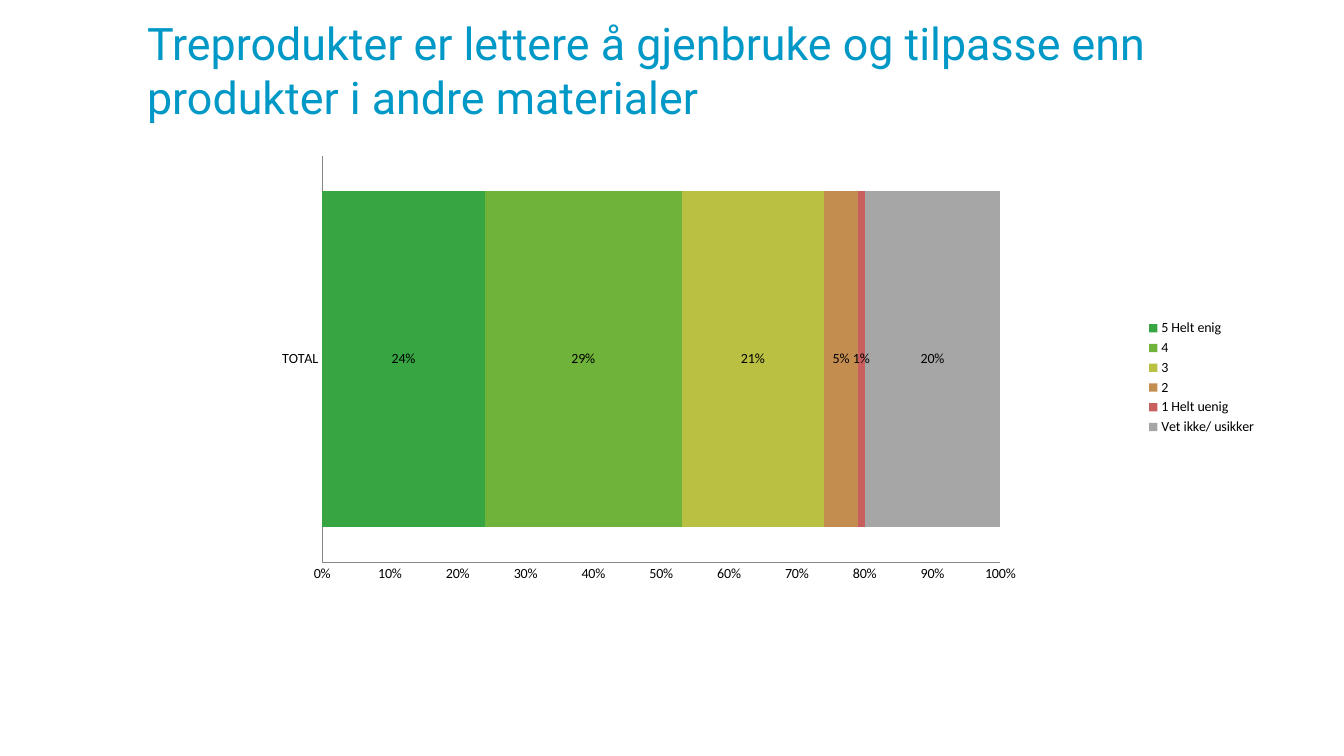
import pptx
import pptx.chart.data
import pptx.dml.color
import pptx.enum.chart
import pptx.enum.text
import pptx.oxml
import pptx.util
from dataclasses import dataclass

Pt = pptx.util.Pt
RGB = pptx.dml.color.RGBColor.from_string


@dataclass(frozen=True)
class Theme:
    heading_font: str = "Roboto"
    chart_font: str = "Calibri"
    heading_size: int = 32
    chart_size: int = 10
    heading: str = "0098C6"
    text: str = "000000"
    axis: str = "868686"


THEME = Theme()

# Answer, share, colour
ANSWERS = [
    ("5 Helt enig", 0.24, "37A541"),
    ("4", 0.29, "6FB33B"),
    ("3", 0.21, "BAC042"),
    ("2", 0.05, "C48D50"),
    ("1 Helt uenig", 0.01, "C95E5E"),
    ("Vet ikke/ usikker", 0.20, "A6A6A6"),
]


def style_font(font, name, size, color):
    font.name = name
    font.size = Pt(size)
    font.color.rgb = RGB(color)


def add_heading(slide, left, top, width, height):
    heading = slide.shapes.add_textbox(Pt(left), Pt(top), Pt(width), Pt(height)).text_frame
    heading.word_wrap = True
    heading.vertical_anchor = pptx.enum.text.MSO_ANCHOR.MIDDLE
    statement = heading.paragraphs[0]
    statement.text = "Treprodukter er lettere å gjenbruke og tilpasse enn produkter i andre materialer"
    style_font(statement.font, THEME.heading_font, THEME.heading_size, THEME.heading)


def set_plot_area(chart, x, y, w, h):
    """Fix the inner plot area, as fractions of the chart box."""
    plot_area = chart.plots[0]._element.getparent()
    for old_layout in plot_area.xpath("c:layout"):
        plot_area.remove(old_layout)
    sizes = "".join(f'<c:{tag} val="{value}"/>' for tag, value in zip("xywh", (x, y, w, h)))
    plot_area.insert(0, pptx.oxml.parse_xml(
        '<c:layout xmlns:c="http://schemas.openxmlformats.org/drawingml/2006/chart">'
        '<c:manualLayout><c:layoutTarget val="inner"/>'
        '<c:xMode val="edge"/><c:yMode val="edge"/>'
        f'{sizes}</c:manualLayout></c:layout>'))


def add_answer_chart(slide, left, top, width, height):
    shares = pptx.chart.data.CategoryChartData(number_format="0%")
    shares.categories = ["TOTAL"]
    for answer, share, _ in ANSWERS:
        shares.add_series(answer, [share])
    chart = slide.shapes.add_chart(
        pptx.enum.chart.XL_CHART_TYPE.BAR_STACKED,
        Pt(left), Pt(top), Pt(width), Pt(height), shares).chart
    chart.has_title = False
    style_font(chart.font, THEME.chart_font, THEME.chart_size, THEME.text)
    set_plot_area(chart, 0.206, 0.07, 0.57, 0.788)

    # Bars and their labels
    bars = chart.plots[0]
    bars.gap_width = 21
    bars.overlap = 100
    bars.vary_by_categories = False
    for series, (_, _, color) in zip(bars.series, ANSWERS):
        series.format.fill.solid()
        series.format.fill.fore_color.rgb = RGB(color)
        labels = series.data_labels
        labels.show_value = True
        labels.position = pptx.enum.chart.XL_LABEL_POSITION.CENTER
        labels.number_format = "0%"
        labels.number_format_is_linked = False
        style_font(labels.font, THEME.chart_font, THEME.chart_size, THEME.text)

    # Axes
    for axis in (chart.category_axis, chart.value_axis):
        axis.has_major_gridlines = False
        axis.major_tick_mark = axis.minor_tick_mark = pptx.enum.chart.XL_TICK_MARK.NONE
        axis.format.line.color.rgb = RGB(THEME.axis)
        axis.format.line.width = Pt(0.75)
    percent = chart.value_axis
    percent.minimum_scale, percent.maximum_scale, percent.major_unit = 0, 1, 0.1
    percent.tick_labels.number_format = "0%"
    percent.tick_labels.number_format_is_linked = False

    # Legend
    chart.has_legend = True
    chart.legend.position = pptx.enum.chart.XL_LEGEND_POSITION.RIGHT
    chart.legend.include_in_layout = False
    style_font(chart.legend.font, THEME.chart_font, THEME.chart_size, THEME.text)


def main():
    deck = pptx.Presentation()
    deck.slide_width, deck.slide_height = Pt(960), Pt(540)
    slide = deck.slides.add_slide(deck.slide_layouts[6])
    add_heading(slide, 98, 4.5, 813.5, 90)
    add_answer_chart(slide, 55, 85.5, 850, 368.5)
    deck.save("out.pptx")


if __name__ == "__main__":
    main()
